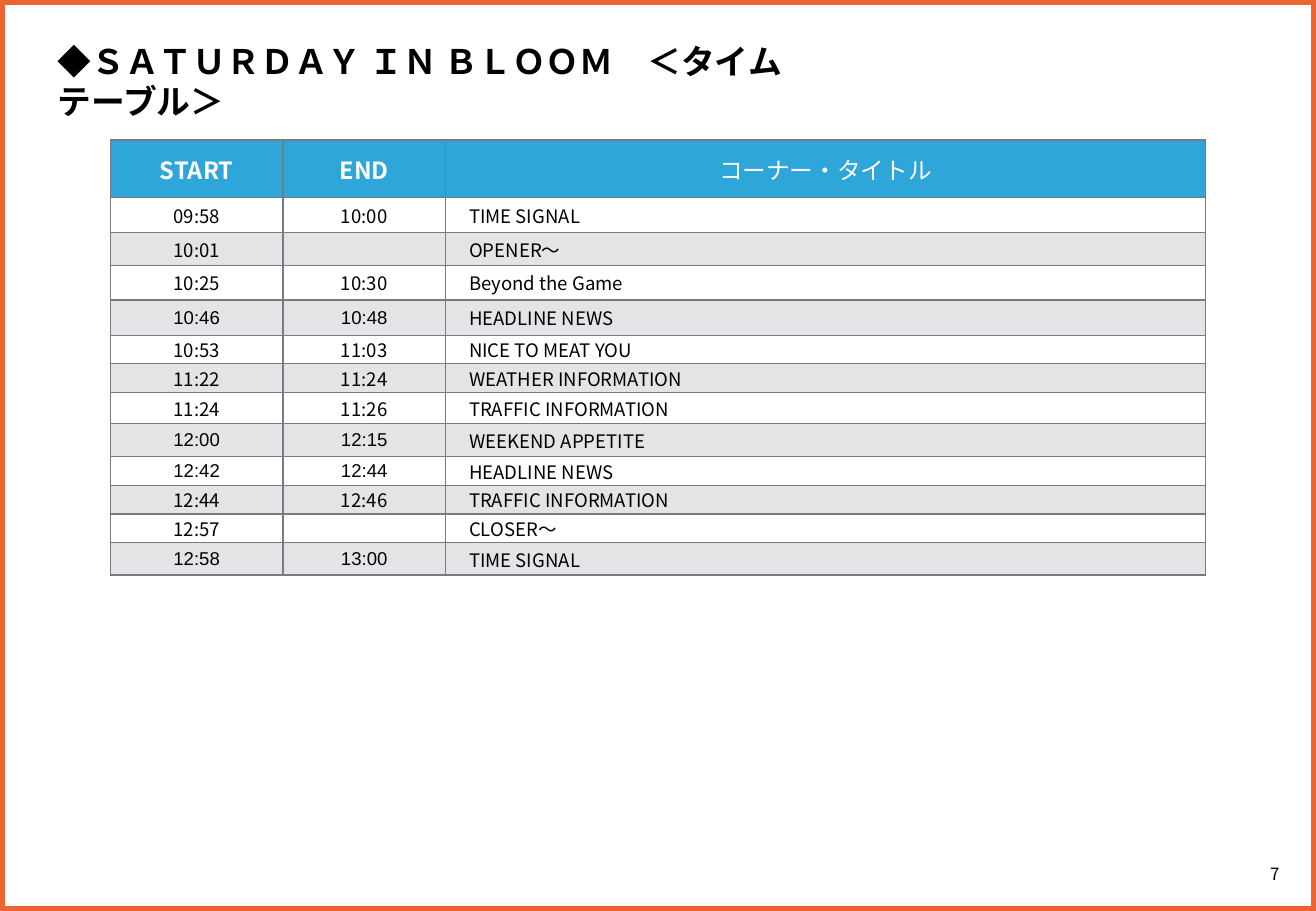
from lxml.etree import SubElement
from pptx import Presentation
from pptx.dml.color import RGBColor
from pptx.enum.shapes import MSO_SHAPE
from pptx.enum.text import MSO_ANCHOR, PP_ALIGN
from pptx.oxml.ns import qn
from pptx.util import Pt

ORANGE = RGBColor(0xEB, 0x64, 0x32)
BLUE = RGBColor(0x2E, 0xA6, 0xDA)
GREY = RGBColor(0x79, 0x7B, 0x84)
BAND = RGBColor(0xE4, 0xE4, 0xE6)
WHITE = RGBColor(0xFF, 0xFF, 0xFF)
BLACK = RGBColor(0, 0, 0)
NOTO = "Noto Sans CJK JP"
ARIAL = "Arial"

HEADINGS = [("START", NOTO), ("END", NOTO), ("コーナー・タイトル", ARIAL)]
HEADING_HEIGHT = 34
COLUMN_WIDTHS = [102.2, 96.4, 450.6]
PROGRAMME = [
    ("09:58", "10:00", "TIME SIGNAL", NOTO, 21),
    ("10:01", "", "OPENER〜", NOTO, 19.3),
    ("10:25", "10:30", "Beyond the Game", NOTO, 20.7),
    ("10:46", "10:48", "HEADLINE NEWS", ARIAL, 20.9),
    ("10:53", "11:03", "NICE TO MEAT YOU", NOTO, 16.8),
    ("11:22", "11:24", "WEATHER INFORMATION", NOTO, 17),
    ("11:24", "11:26", "TRAFFIC INFORMATION", NOTO, 18.5),
    ("12:00", "12:15", "WEEKEND APPETITE", ARIAL, 19.6),
    ("12:42", "12:44", "HEADLINE NEWS", ARIAL, 17),
    ("12:44", "12:46", "TRAFFIC INFORMATION", NOTO, 17),
    ("12:57", "", "CLOSER〜", NOTO, 17),
    ("12:58", "13:00", "TIME SIGNAL", ARIAL, 19.3),
]


def apply(target, values):
    for name, value in values.items():
        setattr(target, name, value)


def write(paragraph, words, size, face=NOTO, color=BLACK, bold=False):
    run = paragraph.add_run()
    run.text = words
    apply(run.font, {"size": Pt(size), "name": face, "bold": bold})
    run.font.color.rgb = color
    if face == NOTO:
        SubElement(run.font._element, qn("a:ea")).set("typeface", face)


def draw_frame(slide, left, top, width, height):
    frame = slide.shapes.add_shape(
        MSO_SHAPE.RECTANGLE, Pt(left), Pt(top), Pt(width), Pt(height))
    frame.shadow.inherit = False
    frame.fill.background()
    frame.line.color.rgb = ORANGE
    frame.line.width = Pt(6)


def draw_title(slide, left, top, width, height):
    title = slide.shapes.add_textbox(Pt(left), Pt(top), Pt(width), Pt(height))
    title.text_frame.word_wrap = True
    heading = title.text_frame.paragraphs[0]
    write(heading, "◆", 20)
    write(heading, "ＳＡＴＵＲＤＡＹ ＩＮ ＢＬＯＯＭ　＜タイムテーブル＞", 20, bold=True)


def draw_page_number(slide, left, top, width, height):
    number = slide.shapes.add_textbox(Pt(left), Pt(top), Pt(width), Pt(height))
    apply(number.text_frame, {"word_wrap": True, "vertical_anchor": MSO_ANCHOR.MIDDLE})
    folio = number.text_frame.paragraphs[0]
    folio.alignment = PP_ALIGN.CENTER
    write(folio, "7", 10)


def add_borders(cell):
    properties = cell._tc.get_or_add_tcPr()
    for position, side in enumerate(("a:lnL", "a:lnR", "a:lnT", "a:lnB")):
        border = SubElement(properties, qn(side), w=str(Pt(1)))
        fill = SubElement(border, qn("a:solidFill"))
        SubElement(fill, qn("a:srgbClr"), val=str(GREY))
        properties.insert(position, border)


def fill_cell(cell, words, fill, size, align=PP_ALIGN.CENTER, indent=0, **style):
    apply(cell, {"margin_left": Pt(indent), "margin_right": 0, "margin_top": 0,
                 "margin_bottom": 0, "vertical_anchor": MSO_ANCHOR.MIDDLE})
    if fill is None:
        cell.fill.background()
    else:
        cell.fill.solid()
        cell.fill.fore_color.rgb = fill
    add_borders(cell)
    entry = cell.text_frame.paragraphs[0]
    entry.alignment = align
    if words:
        write(entry, words, size, **style)
    else:
        entry._p.get_or_add_endParaRPr().set("sz", str(size * 100))


def draw_timetable(slide, left, top, width, height):
    timetable = slide.shapes.add_table(
        len(PROGRAMME) + 1, len(HEADINGS), Pt(left), Pt(top), Pt(width), Pt(height)).table
    apply(timetable, {"first_row": False, "horz_banding": False})
    for column, column_width in zip(timetable.columns, COLUMN_WIDTHS):
        column.width = Pt(column_width)

    timetable.rows[0].height = Pt(HEADING_HEIGHT)
    for column, (heading, face) in enumerate(HEADINGS):
        fill_cell(timetable.cell(0, column), heading, BLUE, 14,
                  face=face, color=WHITE, bold=face == NOTO)

    for row, (start, end, corner, time_face, row_height) in enumerate(PROGRAMME, 1):
        timetable.rows[row].height = Pt(row_height)
        fill = None if row % 2 else BAND
        for column, time in enumerate((start, end)):
            fill_cell(timetable.cell(row, column), time, fill, 11, face=time_face)
        fill_cell(timetable.cell(row, 2), corner, fill, 11, PP_ALIGN.LEFT, indent=14)


def main():
    deck = Presentation()
    apply(deck, {"slide_width": Pt(780), "slide_height": Pt(540)})
    slide = deck.slides.add_slide(deck.slide_layouts[6])
    draw_page_number(slide, 731.5, 505.4, 48.2, 25.2)
    draw_frame(slide, 0, 0, 780, 540)
    draw_timetable(slide, 65.5, 83, 649.2, 258)
    draw_title(slide, 27, 20.6, 470.9, 31.7)
    deck.save("out.pptx")


if __name__ == "__main__":
    main()
